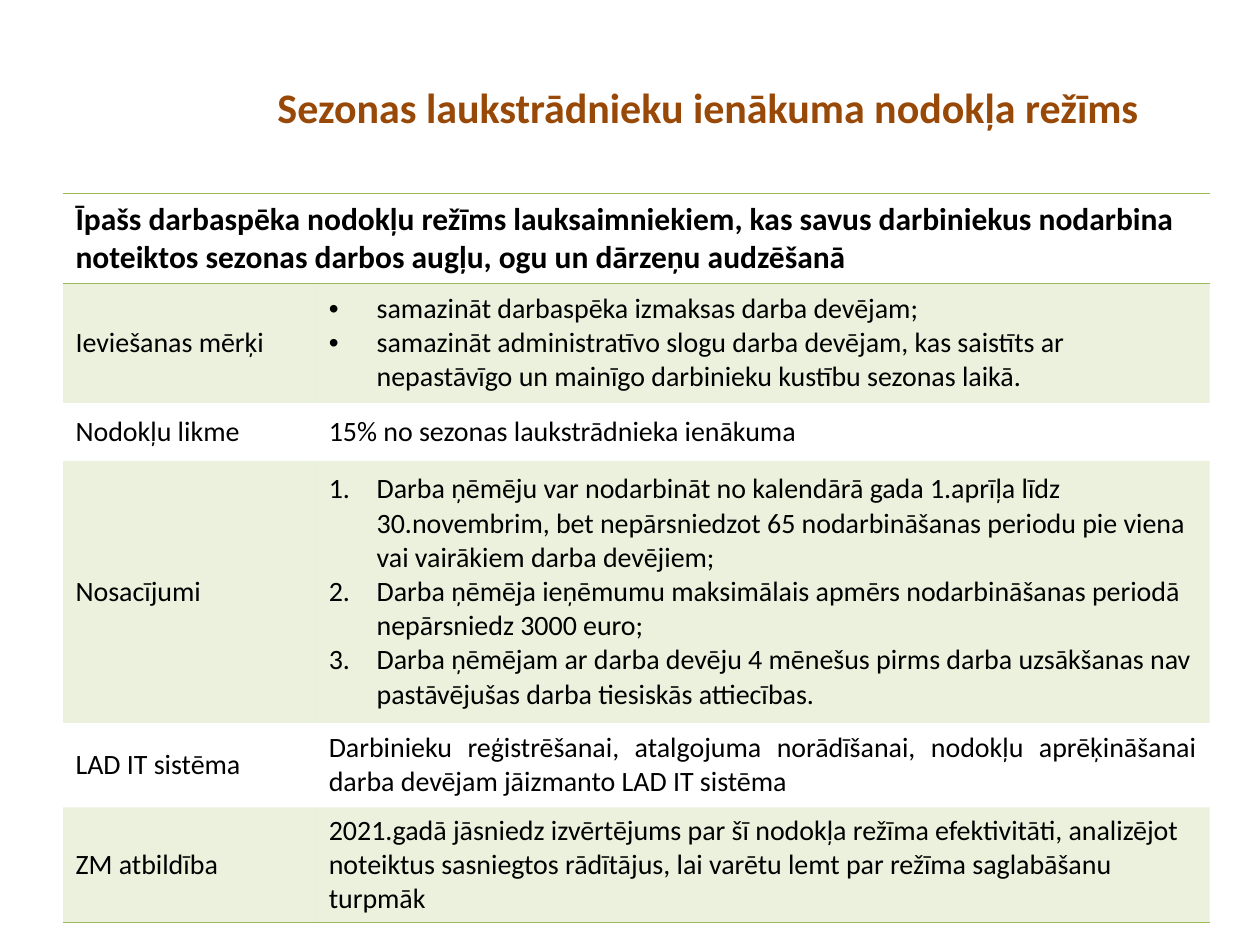
"""Build a slide with a table on the income tax regime for seasonal farm workers."""
import lxml.etree
import pptx
import pptx.dml.color
import pptx.enum.text
import pptx.oxml.ns
import pptx.util

THEME = {
    "font": "Calibri", "title": "984807", "text": "000000", "accent": "9BBB59",
    "tint": 20, "title_size": 24, "heading_size": 18, "body_size": 16,
    "indent": 0.38, "rule_width": 1,
}
ALIGN = pptx.enum.text.PP_ALIGN
MIDDLE = pptx.enum.text.MSO_ANCHOR.MIDDLE
qn = pptx.oxml.ns.qn


def write(para, text, size=THEME["body_size"], color=THEME["text"], bold=False,
          align=ALIGN.LEFT, bullet=None, after=0):
    para.alignment = align
    para.space_after = pptx.util.Pt(after)
    if bullet:
        properties = para._p.get_or_add_pPr()
        indent = pptx.util.Inches(THEME["indent"])
        properties.set("marL", str(indent))
        properties.set("indent", str(-indent))
        if bullet == "number":
            lxml.etree.SubElement(properties, qn("a:buFont"), typeface="+mj-lt")
            lxml.etree.SubElement(properties, qn("a:buAutoNum"), type="arabicPeriod")
        else:
            lxml.etree.SubElement(properties, qn("a:buFont"), typeface="Arial")
            lxml.etree.SubElement(properties, qn("a:buChar"), char=bullet)
    span = para.add_run()
    span.text = text
    span.font.name = THEME["font"]
    span.font.size = pptx.util.Pt(size)
    span.font.bold = bold
    span.font.color.rgb = pptx.dml.color.RGBColor.from_string(color)


def add_rule(cell, side):
    line = lxml.etree.Element(qn(f"a:{side}"), w=str(pptx.util.Pt(THEME["rule_width"])))
    fill = lxml.etree.SubElement(line, qn("a:solidFill"))
    lxml.etree.SubElement(fill, qn("a:srgbClr"), val=THEME["accent"])
    cell._tc.get_or_add_tcPr().insert(0, line)


deck = pptx.Presentation()
deck.slide_width = pptx.util.Inches(10)
deck.slide_height = pptx.util.Inches(7.5)
page = deck.slides.add_slide(deck.slide_layouts[5])

title = page.shapes.title
title.left, title.width = int(deck.slide_width * 0.172), int(deck.slide_width * 0.78)
title.top, title.height = int(deck.slide_height * 0.05), int(deck.slide_height * 0.125)
title.text_frame.vertical_anchor = MIDDLE
title.text_frame.margin_left = title.text_frame.margin_right = pptx.util.Inches(0.07)
title.text_frame.margin_top = title.text_frame.margin_bottom = pptx.util.Inches(0.04)
write(title.text_frame.paragraphs[0], "Sezonas laukstrādnieku ienākuma nodokļa režīms",
      size=THEME["title_size"], color=THEME["title"], bold=True, align=ALIGN.CENTER)

heading = ("Īpašs darbaspēka nodokļu režīms lauksaimniekiem, kas savus darbiniekus nodarbina "
           "noteiktos sezonas darbos augļu, ogu un dārzeņu audzēšanā")
topics = [
    ("Ieviešanas mērķi", 0.95, {"bullet": "•"}, [
        "samazināt darbaspēka izmaksas darba devējam;",
        "samazināt administratīvo slogu darba devējam, kas saistīts ar nepastāvīgo un "
        "mainīgo darbinieku kustību sezonas laikā."]),
    ("Nodokļu likme", 0.46, {}, ["15% no sezonas laukstrādnieka ienākuma"]),
    ("Nosacījumi", 2.08, {"bullet": "number"}, [
        "Darba ņēmēju var nodarbināt no kalendārā gada 1.aprīļa līdz 30.novembrim, bet "
        "nepārsniedzot 65 nodarbināšanas periodu pie viena vai vairākiem darba devējiem;",
        "Darba ņēmēja ieņēmumu maksimālais apmērs nodarbināšanas periodā nepārsniedz 3000 euro;",
        "Darba ņēmējam ar darba devēju 4 mēnešus pirms darba uzsākšanas nav pastāvējušas "
        "darba tiesiskās attiecības."]),
    ("LAD IT sistēma", 0.67, {"align": ALIGN.JUSTIFY}, [
        "Darbinieku reģistrēšanai, atalgojuma norādīšanai, nodokļu aprēķināšanai darba "
        "devējam jāizmanto LAD IT sistēma"]),
    ("ZM atbildība", 0.89, {"after": 6}, [
        "2021.gadā jāsniedz izvērtējums par šī nodokļa režīma efektivitāti, analizējot "
        "noteiktus sasniegtos rādītājus, lai varētu lemt par režīma saglabāšanu turpmāk"]),
]
columns = [2.01, 7.09]
rows = [0.67] + [height for _, height, _, _ in topics]
frame = page.shapes.add_table(
    len(rows), len(columns), int(deck.slide_width * 0.05), int(deck.slide_height * 0.205),
    pptx.util.Inches(sum(columns)), pptx.util.Inches(sum(rows)))
table = frame.table
table.first_row = table.horz_banding = False
table._tbl.tblPr.find(qn("a:tableStyleId")).text = "{2D5ABB26-0587-4C30-8999-92F81FD0307C}"
for column, width in zip(table.columns, columns):
    column.width = pptx.util.Inches(width)
for row, height in zip(table.rows, rows):
    row.height = pptx.util.Inches(height)

table.cell(0, 0).merge(table.cell(0, 1))
write(table.cell(0, 0).text_frame.paragraphs[0], heading,
      size=THEME["heading_size"], bold=True)
for number, (label, _, style, lines) in enumerate(topics, start=1):
    for cell, texts, options in zip(table.rows[number].cells, ([label], lines), ({}, style)):
        cell.vertical_anchor = MIDDLE
        for index, text in enumerate(texts):
            body = cell.text_frame
            write(body.add_paragraph() if index else body.paragraphs[0], text, **options)

for number, row in enumerate(table.rows):
    for cell in row.cells:
        if number % 2:
            cell.fill.solid()
            cell.fill.fore_color.rgb = pptx.dml.color.RGBColor.from_string(THEME["accent"])
            color = cell._tc.tcPr.find(".//" + qn("a:srgbClr"))
            lxml.etree.SubElement(color, qn("a:alpha"), val=str(THEME["tint"] * 1000))
        else:
            cell.fill.background()
        if number in (0, len(rows) - 1):
            add_rule(cell, "lnB")
        if number == 0:
            add_rule(cell, "lnT")

deck.save("out.pptx")
